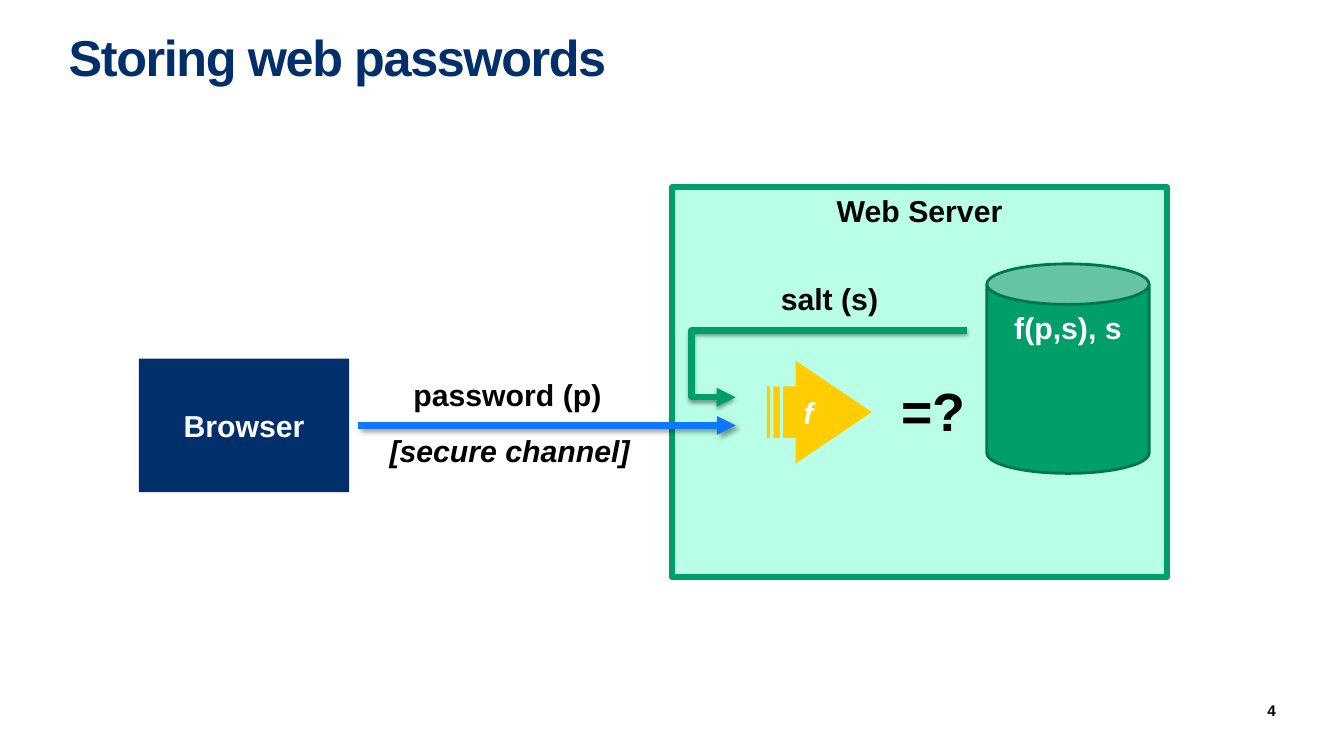
from dataclasses import dataclass

from lxml import etree
from pptx import Presentation
from pptx.dml.color import RGBColor
from pptx.enum import shapes, text
from pptx.oxml import ns
from pptx.util import Cm, Pt


@dataclass(frozen=True)
class Theme:
    """Hold the colours, type sizes and line widths of the slide."""

    font: str = "Arial"
    navy: str = "002F6C"
    blue: str = "0E77FF"
    green: str = "009E69"
    dark_green: str = "00764F"
    mint: str = "B9FFE7"
    yellow: str = "FFCD00"
    black: str = "000000"
    white: str = "FFFFFF"
    title: float = 36
    label: float = 21.6
    symbol: float = 38.4
    number: float = 11
    thick: float = 4.5
    thin: float = 2


T = Theme()


def box(*lengths):
    """Turn centimetre values into lengths."""
    return [Cm(v) for v in lengths]


def write(s, words, size=T.label, color=T.black, italic=False,
          align=text.PP_ALIGN.CENTER, anchor=text.MSO_ANCHOR.TOP,
          insets=None, spacing=None, tracking=None):
    """Fill a shape with one formatted paragraph."""
    tf = s.text_frame
    tf.word_wrap = True
    tf.auto_size = text.MSO_AUTO_SIZE.NONE
    tf.vertical_anchor = anchor
    if insets is not None:
        (tf.margin_left, tf.margin_top,
         tf.margin_right, tf.margin_bottom) = box(*insets)
    p = tf.paragraphs[0]
    p.alignment = align
    if spacing:
        p.line_spacing = spacing
    r = p.add_run()
    r.text = words
    r.font.name = T.font
    r.font.size = Pt(size)
    r.font.bold = True
    r.font.italic = italic
    r.font.color.rgb = RGBColor.from_string(color)
    if tracking:
        r.font._element.set("spc", str(int(tracking * 100)))


def add_title(slide, words, at):
    """Place and format the title placeholder."""
    s = slide.shapes.title
    s.left, s.top, s.width, s.height = box(*at)
    write(s, words, T.title, T.navy, align=text.PP_ALIGN.LEFT,
          insets=(0, 0, 0, 0), spacing=0.85, tracking=-1)


def add_label(slide, words, at, insets=(0, 0, 0, 0), **fmt):
    """Add a text box."""
    write(slide.shapes.add_textbox(*box(*at)), words, insets=insets, **fmt)


def add_block(slide, kind, words, at, fill, line=None, width=T.thick,
              adjust=(), **fmt):
    """Add a filled preset shape with its caption."""
    s = slide.shapes.add_shape(kind, *box(*at))
    s.shadow.inherit = False
    for i, value in enumerate(adjust):
        s.adjustments[i] = value
    s.fill.solid()
    s.fill.fore_color.rgb = RGBColor.from_string(fill)
    if line:
        s.line.color.rgb = RGBColor.from_string(line)
        s.line.width = Pt(width)
    else:
        s.line.fill.background()
    write(s, words, **fmt)


def add_arrow(slide, kind, ends, color, blur, dist, angle, alpha, bend=None):
    """Add a connector with an arrowhead and a soft shadow."""
    s = slide.shapes.add_connector(kind, *box(*ends))
    s.line.color.rgb = RGBColor.from_string(color)
    s.line.width = Pt(T.thick)
    etree.SubElement(s.line._get_or_add_ln(), ns.qn("a:tailEnd"), type="triangle")
    sppr = s._element.spPr
    if bend:
        guides = sppr.find(ns.qn("a:prstGeom")).get_or_add_avLst()
        etree.SubElement(guides, ns.qn("a:gd"), name="adj1",
                         fmla=f"val {round(bend * 100000)}")
    effects = etree.SubElement(sppr, ns.qn("a:effectLst"))
    shadow = etree.SubElement(
        effects, ns.qn("a:outerShdw"), blurRad=str(Pt(blur)),
        dist=str(Pt(dist)), dir=str(angle * 60000), rotWithShape="0")
    tint = etree.SubElement(shadow, ns.qn("a:srgbClr"), val=T.black)
    etree.SubElement(tint, ns.qn("a:alpha"), val=str(alpha * 1000))


def main():
    """Build the slide and save it."""
    prs = Presentation()
    prs.slide_width, prs.slide_height = box(33.87, 19.05)
    slide = prs.slides.add_slide(prs.slide_layouts[5])
    kinds, lines = shapes.MSO_SHAPE, shapes.MSO_CONNECTOR
    middle = text.MSO_ANCHOR.MIDDLE

    add_title(slide, "Storing web passwords", (1.73, 0.89, 30.4, 3.33))
    add_label(slide, "4", (29.95, 17.68, 2.21, 0.43), size=T.number,
              align=text.PP_ALIGN.RIGHT, anchor=middle,
              insets=(0.25, 0.13, 0, 0.13))

    add_block(slide, kinds.RECTANGLE, "Browser", (3.5, 9.04, 5.3, 3.36),
              T.navy, color=T.white, anchor=middle)
    add_block(slide, kinds.RECTANGLE, "Web Server", (16.94, 4.72, 12.47, 9.83),
              T.mint, T.green)
    add_label(slide, "password (p)", (9.73, 9.47, 6.12, 0.91))
    add_label(slide, "[secure channel]", (9.25, 10.9, 7.19, 0.91), italic=True)

    add_block(slide, kinds.CAN, "f(p,s), s", (24.87, 6.65, 4.09, 5.28),
              T.green, T.dark_green, T.thin, color=T.white)
    add_block(slide, kinds.STRIPED_RIGHT_ARROW, "f", (19.33, 9.09, 2.64, 2.59),
              T.yellow, adjust=(0.5, 0.74), color=T.white, italic=True,
              anchor=middle)
    add_arrow(slide, lines.ELBOW, (24.38, 8.33, 18.54, 10.01), T.green,
              blur=3.1, dist=1.6, angle=90, alpha=38, bend=1.19)
    add_label(slide, "salt (s)", (18.62, 7.06, 4.57, 0.91))
    add_label(slide, "=?", (22.68, 9.53, 1.68, 1.65), size=T.symbol)
    add_arrow(slide, lines.STRAIGHT, (9.02, 10.72, 18.54, 10.72), T.blue,
              blur=4, dist=3, angle=45, alpha=40)

    prs.save("out.pptx")


if __name__ == "__main__":
    main()
